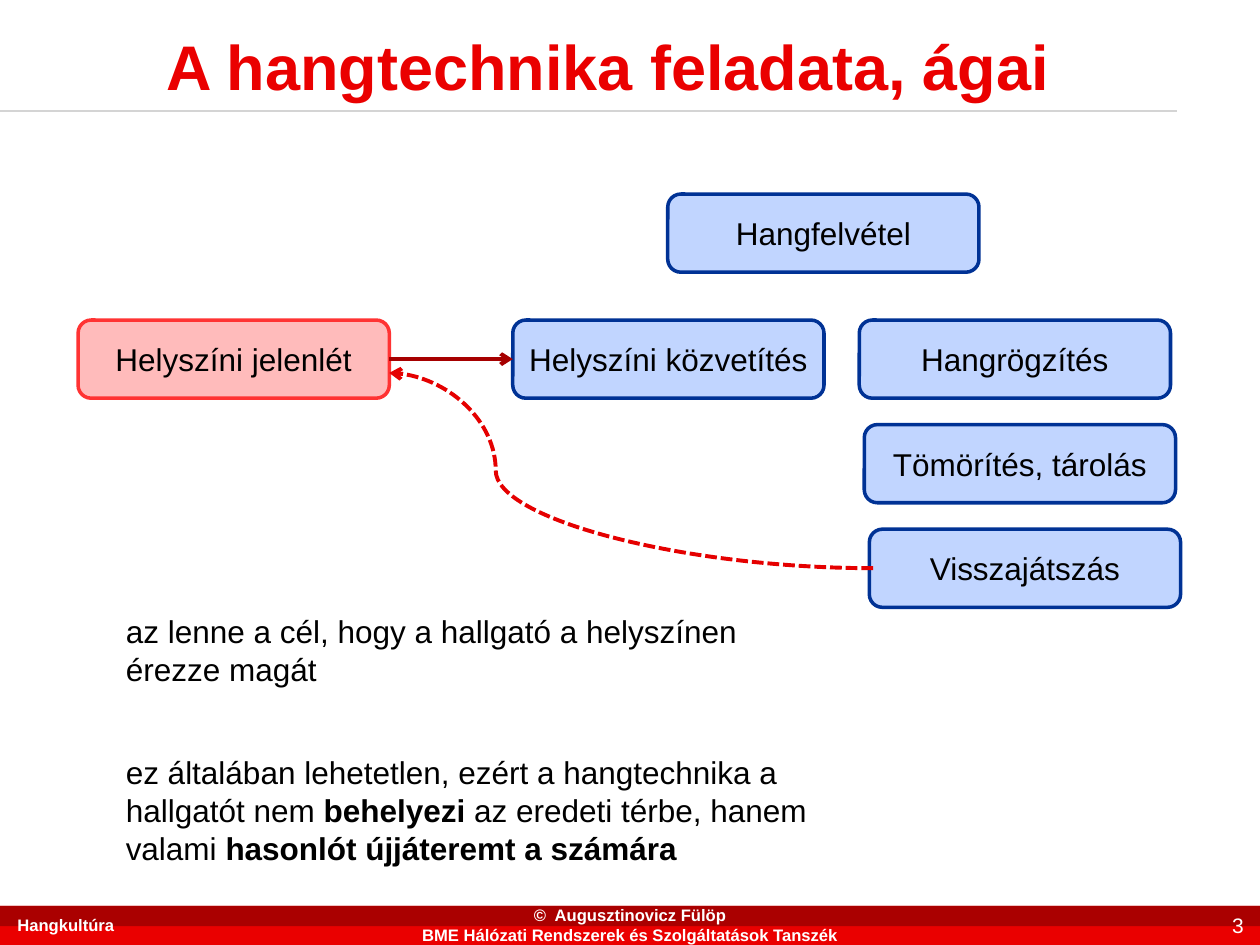
from dataclasses import dataclass

from lxml import etree
from pptx import Presentation
from pptx.dml.color import RGBColor
from pptx.enum.dml import MSO_LINE
from pptx.enum.shapes import MSO_CONNECTOR, MSO_SHAPE
from pptx.enum.text import MSO_ANCHOR, PP_ALIGN
from pptx.oxml.ns import qn
from pptx.util import Inches, Pt

RECTANGLE, ROUNDED = MSO_SHAPE.RECTANGLE, MSO_SHAPE.ROUNDED_RECTANGLE
STRAIGHT, CURVE = MSO_CONNECTOR.STRAIGHT, MSO_CONNECTOR.CURVE
LEFT, CENTER, RIGHT = PP_ALIGN.LEFT, PP_ALIGN.CENTER, PP_ALIGN.RIGHT
TOP, MIDDLE = MSO_ANCHOR.TOP, MSO_ANCHOR.MIDDLE
SIDE_LEFT, SIDE_RIGHT = 1, 3

WIDTH, HEIGHT = Inches(10), Inches(7.5)
COLUMNS, ROWS = 100, 75
BOX_COLUMNS, BOX_ROWS = 24.7, 6.2
FOOTER_ROW, FOOTER_ROWS = 71.8, 3.2

COLORS = {
    "red": "EA0000", "dark red": "AA0000", "rule": "D4D4D4",
    "arrow": "A60000", "dashed": "E50000",
    "pink": "FFBBBB", "pink line": "FF3333",
    "blue": "C1D5FF", "blue line": "003295",
    "white": "FFFFFF", "black": "000000",
}


@dataclass
class Area:
    column: float
    row: float
    columns: float
    rows: float

    def place(self) -> tuple[int, int, int, int]:
        return x(self.column), y(self.row), x(self.columns), y(self.rows)


@dataclass
class Box:
    label: str
    column: float
    row: float
    color: str = "blue"


@dataclass
class Caption:
    """Text runs as (text, bold) pairs, with their area and format."""
    runs: list[tuple[str, bool]]
    area: Area
    size: float = 18
    color: str = "black"
    align: PP_ALIGN = LEFT
    anchor: MSO_ANCHOR = TOP


def x(columns: float) -> int:
    return round(WIDTH * columns / COLUMNS)


def y(rows: float) -> int:
    return round(HEIGHT * rows / ROWS)


def rgb(name: str) -> RGBColor:
    return RGBColor.from_string(COLORS[name])


def format_font(font, size: float, color: str, bold: bool = False) -> None:
    for name, value in {"name": "Arial", "size": Pt(size), "bold": bold}.items():
        setattr(font, name, value)
    font.color.rgb = rgb(color)


def fill_text(frame, runs: list[tuple[str, bool]], size: float, color: str,
              align: PP_ALIGN, anchor: MSO_ANCHOR) -> None:
    frame.word_wrap = True
    frame.vertical_anchor = anchor
    paragraph = frame.paragraphs[0]
    paragraph.alignment = align
    for text, bold in runs:
        for index, line in enumerate(text.split("\n")):
            if index:
                paragraph.add_line_break()
            run = paragraph.add_run()
            run.text = line
            format_font(run.font, size, color, bold)


def add_band(slide, area: Area, color: str) -> None:
    shape = slide.shapes.add_shape(RECTANGLE, *area.place())
    shape.shadow.inherit = False
    shape.fill.solid()
    shape.fill.fore_color.rgb = rgb(color)
    shape.line.fill.background()


def add_box(slide, box: Box):
    area = Area(box.column, box.row, BOX_COLUMNS, BOX_ROWS)
    shape = slide.shapes.add_shape(ROUNDED, *area.place())
    shape.shadow.inherit = False
    shape.fill.solid()
    shape.fill.fore_color.rgb = rgb(box.color)
    shape.line.color.rgb = rgb(f"{box.color} line")
    shape.line.width = Pt(2)
    shape.text_frame.margin_left = shape.text_frame.margin_right = 0
    fill_text(shape.text_frame, [(box.label, False)], 18, "black", CENTER, MIDDLE)
    return shape


def add_caption(slide, caption: Caption) -> None:
    shape = slide.shapes.add_textbox(*caption.area.place())
    fill_text(shape.text_frame, caption.runs, caption.size, caption.color,
              caption.align, caption.anchor)


def add_line(slide, kind: MSO_CONNECTOR, start: tuple[float, float],
             end: tuple[float, float], color: str, width: float, arrow: bool = True):
    line = slide.shapes.add_connector(kind, x(start[0]), y(start[1]), x(end[0]), y(end[1]))
    line.line.color.rgb = rgb(color)
    line.line.width = Pt(width)
    if arrow:
        etree.SubElement(line.line._get_or_add_ln(), qn("a:tailEnd"), type="arrow")
    etree.SubElement(line._element.spPr, qn("a:effectLst"))
    return line


def bend_curve(curve, share: float) -> None:
    """Put the curve's turn at this share of its way across."""
    adjustments = curve._element.spPr.find(qn("a:prstGeom")).get_or_add_avLst()
    etree.SubElement(adjustments, qn("a:gd"), name="adj1", fmla=f"val {round(share * 100000)}")


def set_title(slide, text: str) -> None:
    title = slide.shapes.title
    area = Area(12.2, 0.8, 87.4, 8.7).place()
    for name, value in zip(("left", "top", "width", "height"), area):
        setattr(title, name, value)
    title.text_frame.text = text
    title.text_frame.vertical_anchor = MIDDLE
    paragraph = title.text_frame.paragraphs[0]
    paragraph.alignment = LEFT
    format_font(paragraph.runs[0].font, 36, "red", True)


def main() -> None:
    presentation = Presentation()
    presentation.slide_width, presentation.slide_height = WIDTH, HEIGHT
    slide = presentation.slides.add_slide(presentation.slide_layouts[5])

    add_band(slide, Area(0, 71.9, COLUMNS, 3.1), "red")
    add_band(slide, Area(0, 71.9, COLUMNS, 1.6), "dark red")
    add_line(slide, STRAIGHT, (0, 8.8), (93.4, 8.8), "rule", 1.5, arrow=False)
    set_title(slide, "A hangtechnika feladata, ágai")

    presence = add_box(slide, Box("Helyszíni jelenlét", 6.2, 25.4, "pink"))
    add_box(slide, Box("Hangfelvétel", 53, 15.4))
    broadcast = add_box(slide, Box("Helyszíni közvetítés", 40.7, 25.4))
    for index, label in enumerate(("Hangrögzítés", "Tömörítés, tárolás", "Visszajátszás")):
        add_box(slide, Box(label, 68.2 + 0.4 * index, 25.4 + 8.3 * index))

    arrow = add_line(slide, STRAIGHT, (30.9, 28.5), (40.7, 28.5), "arrow", 2.25)
    arrow.begin_connect(presence, SIDE_RIGHT)
    arrow.end_connect(broadcast, SIDE_LEFT)

    playback = add_line(slide, CURVE, (69.3, 45.1), (30.9, 29.6), "dashed", 2.25)
    playback.line.dash_style = MSO_LINE.SQUARE_DOT
    bend_curve(playback, 0.78)

    footer = {"color": "white", "anchor": MIDDLE}
    captions = [
        Caption([("az lenne a cél, hogy a hallgató a helyszínen érezze magát", False)],
                Area(9, 48.1, 51.5, 7.1)),
        Caption([("ez általában lehetetlen, ezért a hangtechnika a hallgatót nem ", False),
                 ("behelyezi", True),
                 (" az eredeti térbe, hanem valami ", False),
                 ("hasonlót újjáteremt a számára", True)],
                Area(9, 59.3, 56.4, 10.1)),
        Caption([("Hangkultúra", True)],
                Area(0.4, FOOTER_ROW, 29.4, FOOTER_ROWS), 9.5, **footer),
        Caption([("©  Augusztinovicz Fülöp\nBME Hálózati Rendszerek és Szolgáltatások Tanszék", True)],
                Area(30, FOOTER_ROW, 40, FOOTER_ROWS), 9.5, align=CENTER, **footer),
        Caption([("3", False)],
                Area(92.5, FOOTER_ROW, 7.2, FOOTER_ROWS), 12, align=RIGHT, **footer),
    ]
    for caption in captions:
        add_caption(slide, caption)

    presentation.save("out.pptx")


if __name__ == "__main__":
    main()
